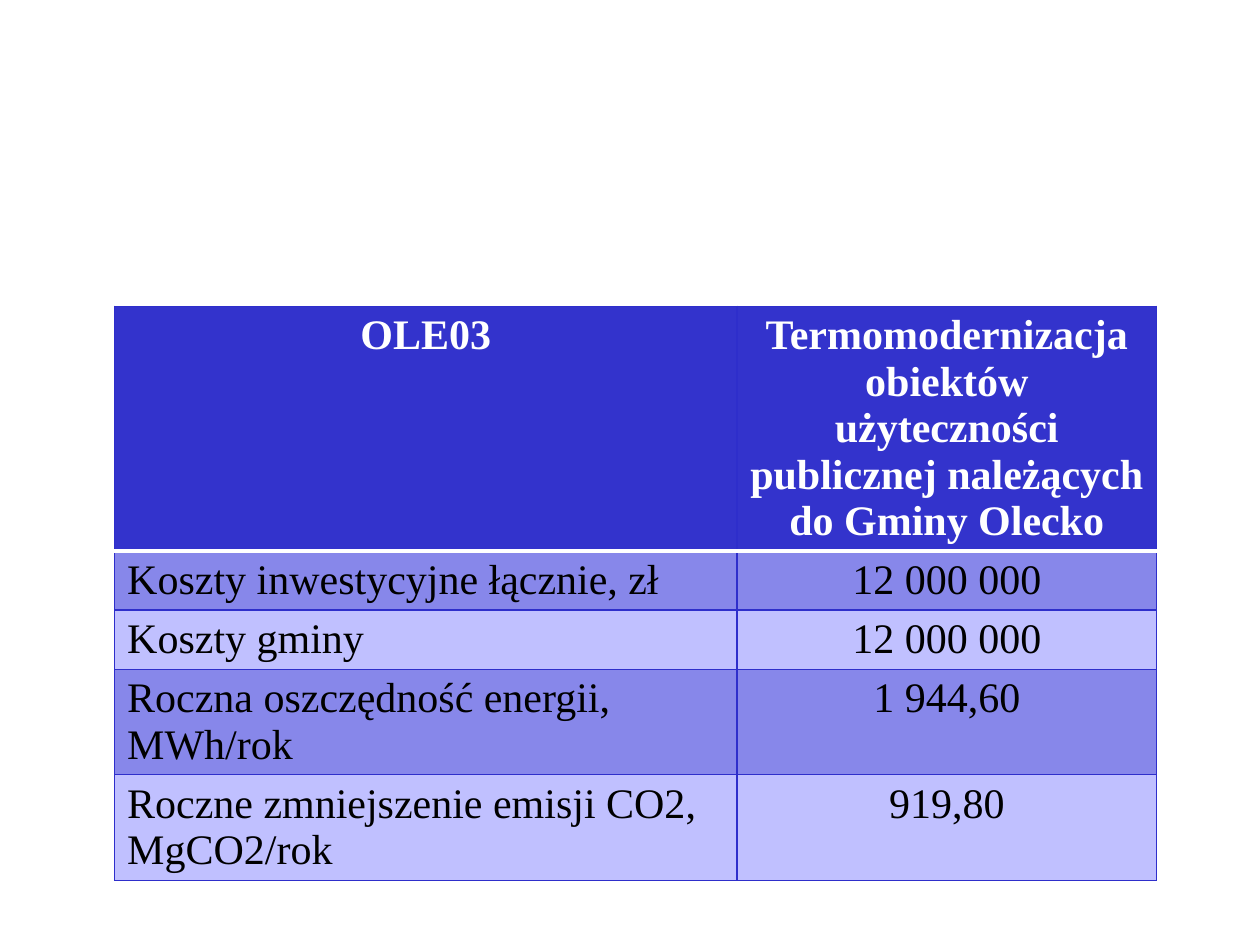
from lxml import etree
from pptx import Presentation
from pptx import util as u
from pptx.dml.color import RGBColor
from pptx.enum import text
from pptx.oxml import ns

HUES = {"head": "3333CC", "odd": "8787EA", "even": "C0C0FF",
        "edge": "2E2ECB", "white": "FFFFFF", "black": "000000"}
ROWS = [
    ("OLE03", "Termomodernizacja obiektów użyteczności publicznej "
              "należących do Gminy Olecko"),
    ("Koszty inwestycyjne łącznie, zł", "12 000 000"),
    ("Koszty gminy", "12 000 000"),
    ("Roczna oszczędność energii, MWh/rok", "1 944,60"),
    ("Roczne zmniejszenie emisji CO2, MgCO2/rok", "919,80"),
]


class Deck:
    font, size = "Times New Roman", 24

    def __init__(self, wide, high):
        self.prs = Presentation()
        self.prs.slide_width, self.prs.slide_height = u.Inches(wide), u.Inches(high)
        self.slide = self.prs.slides.add_slide(self.prs.slide_layouts[6])

    def hue(self, name):
        return RGBColor.from_string(HUES[name])

    def edge(self, cell, side, name, width):
        line = etree.SubElement(cell._tc.get_or_add_tcPr(), ns.qn("a:ln" + side),
                                w=str(u.Pt(width)))
        fill = etree.SubElement(line, ns.qn("a:solidFill"))
        etree.SubElement(fill, ns.qn("a:srgbClr"), val=HUES[name])

    def cell(self, cell, words, row, col):
        # Borders go before the fill; a white rule parts head and body
        for side in "LRTB":
            rule = (row, side) in ((0, "B"), (1, "T"))
            self.edge(cell, side, *(("white", 2) if rule else ("edge", 0.75)))
        cell.fill.solid()
        cell.fill.fore_color.rgb = self.hue(
            "head" if row == 0 else "odd" if row % 2 else "even")

        # Text: only the labels below the head stand left
        para = cell.text_frame.paragraphs[0]
        left = row > 0 and col == 0
        para.alignment = text.PP_ALIGN.LEFT if left else text.PP_ALIGN.CENTER
        run = para.add_run()
        run.text = words
        run.font.name, run.font.size = self.font, u.Pt(self.size)
        run.font.bold = row == 0
        run.font.color.rgb = self.hue("black" if row else "white")

    def table(self, rows, left, top, cols, highs):
        frame = self.slide.shapes.add_table(
            len(rows), len(cols), u.Inches(left), u.Inches(top),
            u.Inches(sum(cols)), u.Inches(sum(highs)))
        grid = frame.table
        for col, wide in zip(grid.columns, cols):
            col.width = u.Inches(wide)
        for row, high in zip(grid.rows, highs):
            row.height = u.Inches(high)
        for r, row in enumerate(rows):
            for c, words in enumerate(row):
                self.cell(grid.cell(r, c), words, r, c)


def main():
    deck = Deck(10, 7.5)
    # Costs and savings; rows grow to fit their text
    deck.table(ROWS, 0.91, 2.43, (4.94, 3.33), [0.84] + [0.41] * 4)
    deck.prs.save("out.pptx")


if __name__ == "__main__":
    main()
